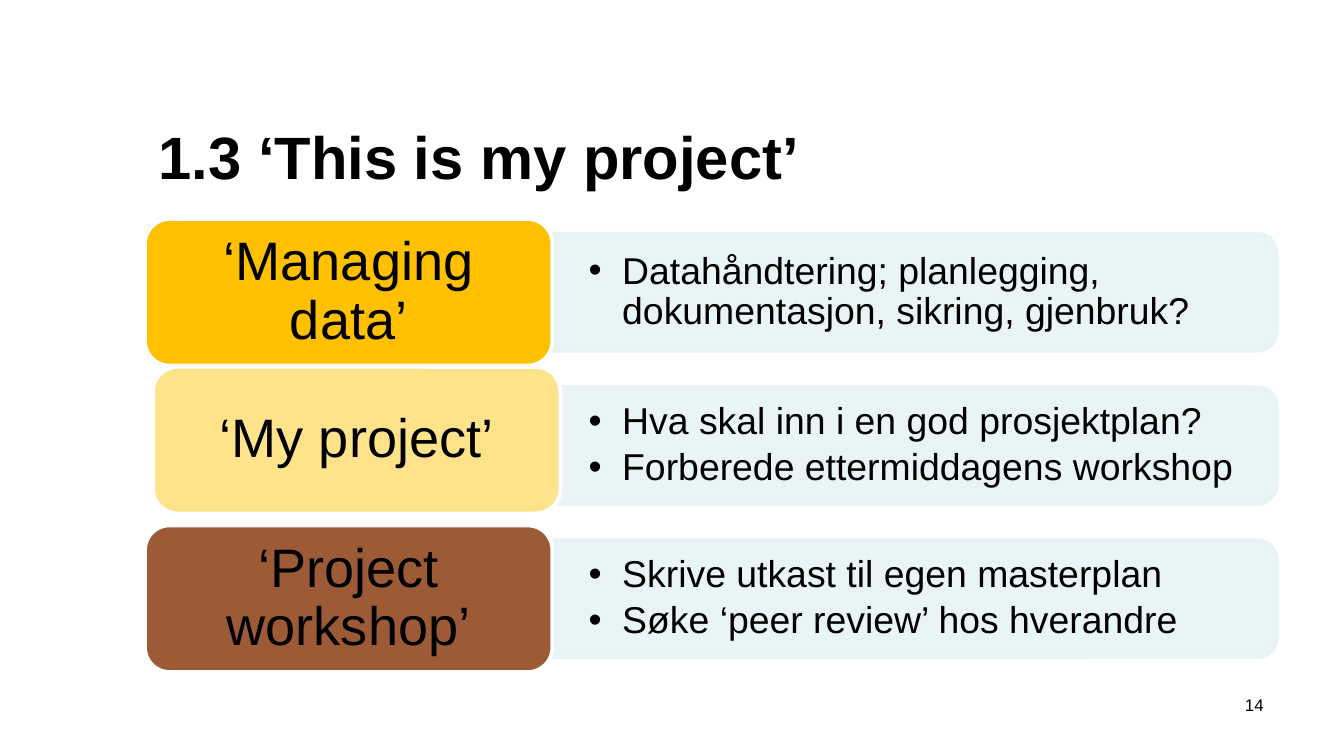
from lxml import etree
from pptx import Presentation
from pptx.dml.color import RGBColor
from pptx.enum import shapes, text
from pptx.oxml.ns import qn
from pptx.util import Inches, Pt

# Content: label, label colour, label nudge (x, y), bullets
TITLE = "1.3 ‘This is my project’"
PAGE = "14"
ROWS = [
    ("‘Managing data’", "FFC000", (0, 0),
     ["Datahåndtering; planlegging, dokumentasjon, sikring, gjenbruk?"]),
    ("‘My project’", "FFE38B", (0.06, -0.04),
     ["Hva skal inn i en god prosjektplan?",
      "Forberede ettermiddagens workshop"]),
    ("‘Project workshop’", "9C5A36", (0, 0),
     ["Skrive utkast til egen masterplan",
      "Søke ‘peer review’ hos hverandre"]),
]

# Layout in inches
LEFT, TOP, PITCH = 1.08, 1.63, 1.14
LABEL_W, LABEL_H = 3.03, 1.09
PANEL_W, PANEL_H = 5.39, 0.87
TEXT_W, TEXT_H = 5.34, 0.79


def color(value):
    return RGBColor.from_string(value)


def box(left, top, width, height):
    return [Inches(n) for n in (left, top, width, height)]


def set_font(p, size, bold=False):
    for r in p.runs:
        r.font.name, r.font.size, r.font.bold = "Arial", Pt(size), bold
        r.font.color.rgb = color("000000")


def set_frame(tf, inset_x, inset_y, anchor=text.MSO_ANCHOR.MIDDLE):
    tf.word_wrap = True
    tf.vertical_anchor = anchor
    tf.margin_left = tf.margin_right = Inches(inset_x)
    tf.margin_top = tf.margin_bottom = Inches(inset_y)


def add_block(s, kind, place, fill, line, opacity=100):
    sp = s.shapes.add_shape(kind, *box(*place))
    sp.shadow.inherit = False
    sp.fill.solid()
    sp.fill.fore_color.rgb = color(fill)
    sp.line.color.rgb = color(line)
    sp.line.width = Pt(2)
    if opacity < 100:
        for clr in sp._element.spPr.iter(qn("a:srgbClr")):
            etree.SubElement(clr, qn("a:alpha"), val=str(opacity * 1000))
    return sp


def add_bullet(p):
    pPr = p._p.get_or_add_pPr()
    pPr.set("marL", str(Inches(0.25)))
    pPr.set("indent", str(-Inches(0.25)))
    etree.SubElement(pPr, qn("a:buFont"), typeface="Arial")
    etree.SubElement(pPr, qn("a:buChar"), char="•")


def add_row(s, top, label, fill, nudge, bullets):
    # Panel: a shape with two rounded corners, turned to point right
    mid_x, mid_y = LEFT + LABEL_W + PANEL_W / 2, top + LABEL_H / 2
    panel = add_block(s, shapes.MSO_SHAPE.ROUND_2_SAME_RECTANGLE,
                      (mid_x - PANEL_H / 2, mid_y - PANEL_W / 2, PANEL_H, PANEL_W),
                      "E7F3F4", "E7F3F4", 90)
    panel.rotation = 90

    # Bullets on the panel
    tf = s.shapes.add_textbox(
        *box(LEFT + LABEL_W, mid_y - TEXT_H / 2, TEXT_W, TEXT_H)).text_frame
    set_frame(tf, 0.27, 0.14)
    tf.text = "\n".join(bullets)
    for p in tf.paragraphs:
        add_bullet(p)
        p.line_spacing, p.space_after = 0.9, Pt(3)
        set_font(p, 20)

    # Label
    dx, dy = nudge
    sp = add_block(s, shapes.MSO_SHAPE.ROUNDED_RECTANGLE,
                   (LEFT + dx, top + dy, LABEL_W, LABEL_H), fill, "FFFFFF")
    set_frame(sp.text_frame, 0.12, 0.06)
    sp.text_frame.text = label
    p = sp.text_frame.paragraphs[0]
    p.alignment, p.line_spacing = text.PP_ALIGN.CENTER, 0.9
    set_font(p, 29)


# Widescreen slide, 16:9
prs = Presentation()
prs.slide_width = Inches(10)
prs.slide_height = Inches(10 * 9 / 16)
s = prs.slides.add_slide(prs.slide_layouts[5])

# Title
title = s.shapes.title
title.left, title.top, title.width, title.height = box(LEFT, 0.69, 8.42, 0.94)
set_frame(title.text_frame, 0.1, 0.05)
title.text_frame.text = TITLE
title.text_frame.paragraphs[0].alignment = text.PP_ALIGN.LEFT
set_font(title.text_frame.paragraphs[0], 32, bold=True)

# Rows
for i, row in enumerate(ROWS):
    add_row(s, TOP + i * PITCH, *row)

# Page number
tf = s.shapes.add_textbox(*box(8.75, 5.12, 0.75, 0.38)).text_frame
set_frame(tf, 0.1, 0.05, text.MSO_ANCHOR.TOP)
tf.text = PAGE
tf.paragraphs[0].alignment = text.PP_ALIGN.RIGHT
set_font(tf.paragraphs[0], 9)

prs.save("out.pptx")
